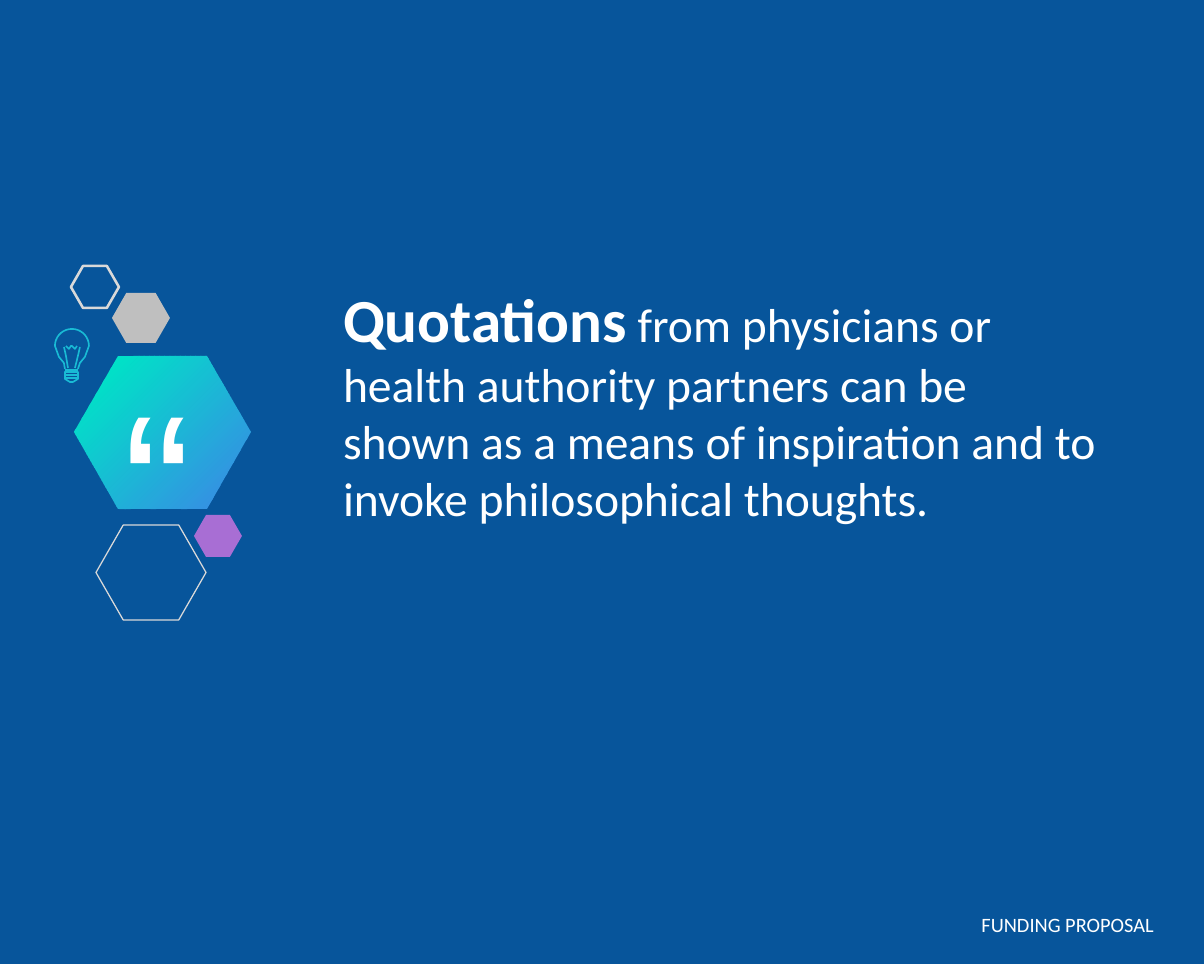
from math import cos, pi, sin

from lxml import etree
from pptx import Presentation
from pptx.dml.color import RGBColor
from pptx.enum.shapes import MSO_CONNECTOR, MSO_SHAPE
from pptx.enum.text import MSO_ANCHOR, PP_ALIGN
from pptx.oxml.ns import qn
from pptx.util import Pt

HEXAGON, STRAIGHT = MSO_SHAPE.HEXAGON, MSO_CONNECTOR.STRAIGHT
LEFT, CENTER, RIGHT = PP_ALIGN.LEFT, PP_ALIGN.CENTER, PP_ALIGN.RIGHT
TOP = MSO_ANCHOR.TOP

EMU_PER_PX = 914400 / 122.4
SLIDE_SIZE = (1204, 964)
COLORS = {
    "background": "07559B", "white": "FFFFFF", "mint": "00E2C7", "blue": "3393E2",
    "purple": "A86ED4", "gray": "BFBFBF", "outline": "D9D9D9", "bulb": "19BBD5",
}

# Large hexagon, shaded by diagonal bands from mint to blue
BADGE_CORNERS = [(118, 356), (207, 356), (251, 432), (207, 509), (118, 509), (74, 432)]
BAND_COUNT, BAND_OVERLAP = 47, 1

# Box in px, fill, line width in pt
HEXAGONS = [
    ((194, 515, 48, 42), "purple", 0),
    ((96, 525, 110, 95), None, 0.75),
    ((112, 293, 58, 50), "gray", 0),
    ((71, 266, 48, 42), None, 1.5),
]

BULB_CENTER, BULB_RADIUS = (72, 346), 17
GLASS_ARC = [
    (BULB_CENTER[0] - BULB_RADIUS * cos(pi * step / 18),
     BULB_CENTER[1] - BULB_RADIUS * sin(pi * step / 18))
    for step in range(19)
]
# Points in px, closed
BULB_OUTLINES = [
    ([(65, 375), (78, 375), (78, 378), (65, 378)], True),
    ([(65, 372), (78, 372), (78, 375), (65, 375)], True),
    ([(65, 378), (65, 379), (70, 382), (73, 382), (78, 379), (78, 378)], True),
    ([(68, 368), (66, 356), (64, 347)], False),
    ([(65, 369), (64, 363), (59, 357), *GLASS_ARC, (85, 357), (80, 363), (78, 369)], False),
    ([(75, 368), (78, 356), (80, 347)], False),
    ([(66, 346), (69, 349), (71, 346), (72, 346), (75, 349), (77, 346)], False),
]
BULB_NECK = [(65, 370), (78, 370)]

TEXTS = [
    {"box": (966, 906, 200, 37), "margin": (12, 6), "align": RIGHT,
     "runs": [("FUNDING PROPOSAL", {"size": Pt(12), "name": "Calibri"})]},
    {"box": (331, 275, 778, 110), "margin": (12, 6), "align": LEFT,
     "runs": [
         ("Quotations", {"size": Pt(36), "name": "Calibri", "bold": True}),
         (" from physicians or health authority partners can be shown as a means of "
          "inspiration and to invoke philosophical thoughts.",
          {"size": Pt(28), "name": "Calibri", "bold": False}),
     ]},
    {"box": (26, 343, 262, 87), "margin": (12, 12), "align": CENTER,
     "runs": [("“", {"size": Pt(120), "name": "Arial"})]},
]


def emu(*lengths):
    return [round(length * EMU_PER_PX) for length in lengths]


def color(name):
    return RGBColor.from_string(COLORS[name])


def set_line(shape, name, width):
    shape.line.color.rgb = color(name)
    shape.line.width = Pt(width)


def add_outline(shapes, points, closed):
    start, *others = [emu(*point) for point in points]
    builder = shapes.build_freeform(*start)
    builder.add_line_segments(others, close=closed)
    shape = builder.convert_to_shape()
    shape.shadow.inherit = False
    return shape


def clip(points, limit, side):
    """Keep the part of a polygon where side * (x + y - limit) is not negative."""
    kept = []
    for (x1, y1), (x2, y2) in zip(points, points[1:] + points[:1]):
        first, second = side * (x1 + y1 - limit), side * (x2 + y2 - limit)
        if first >= 0:
            kept.append((x1, y1))
        if first * second < 0:
            share = first / (first - second)
            kept.append((x1 + share * (x2 - x1), y1 + share * (y2 - y1)))
    return kept


def add_badge(slide):
    shapes = slide.shapes.add_group_shape().shapes
    diagonals = [x + y for x, y in BADGE_CORNERS]
    first = min(diagonals)
    step = (max(diagonals) - first) / BAND_COUNT
    for band in range(BAND_COUNT):
        near = first + band * step
        points = clip(clip(BADGE_CORNERS, near, 1), near + step + BAND_OVERLAP, -1)
        shape = add_outline(shapes, points, True)
        share = band / (BAND_COUNT - 1)
        shape.fill.solid()
        shape.fill.fore_color.rgb = RGBColor(*(
            round(start + share * (end - start))
            for start, end in zip(color("mint"), color("blue"))))
        shape.line.fill.background()


def add_hexagon(slide, box, fill, line_width):
    shape = slide.shapes.add_shape(HEXAGON, *emu(*box))
    shape.shadow.inherit = False
    shape.adjustments[0] = 0.287
    if fill:
        shape.fill.solid()
        shape.fill.fore_color.rgb = color(fill)
    else:
        shape.fill.background()
    if line_width:
        set_line(shape, "outline", line_width)
    else:
        shape.line.fill.background()


def add_bulb(slide):
    shapes = slide.shapes.add_group_shape().shapes
    for points, closed in BULB_OUTLINES:
        shape = add_outline(shapes, points, closed)
        shape.fill.background()
        set_line(shape, "bulb", 0.96)
    start, end = BULB_NECK
    neck = shapes.add_connector(STRAIGHT, *emu(*start, *end))
    etree.SubElement(neck.element.spPr, qn("a:effectLst"))
    set_line(neck, "bulb", 0.96)


def add_text(slide, box, margin, align, runs):
    frame = slide.shapes.add_textbox(*emu(*box)).text_frame
    across, down = emu(*margin)
    settings = {"word_wrap": True, "vertical_anchor": TOP, "margin_left": across,
                "margin_right": across, "margin_top": down, "margin_bottom": down}
    for key, value in settings.items():
        setattr(frame, key, value)
    paragraph = frame.paragraphs[0]
    paragraph.alignment = align
    for text, font in runs:
        run = paragraph.add_run()
        run.text = text
        run.font.color.rgb = color("white")
        for key, value in font.items():
            setattr(run.font, key, value)


def main():
    presentation = Presentation()
    presentation.slide_width, presentation.slide_height = emu(*SLIDE_SIZE)
    slide = presentation.slides.add_slide(presentation.slide_layouts[6])
    slide.background.fill.solid()
    slide.background.fill.fore_color.rgb = color("background")
    add_badge(slide)
    add_bulb(slide)
    for hexagon in HEXAGONS:
        add_hexagon(slide, *hexagon)
    for text in TEXTS:
        add_text(slide, **text)
    presentation.save("out.pptx")


if __name__ == "__main__":
    main()
